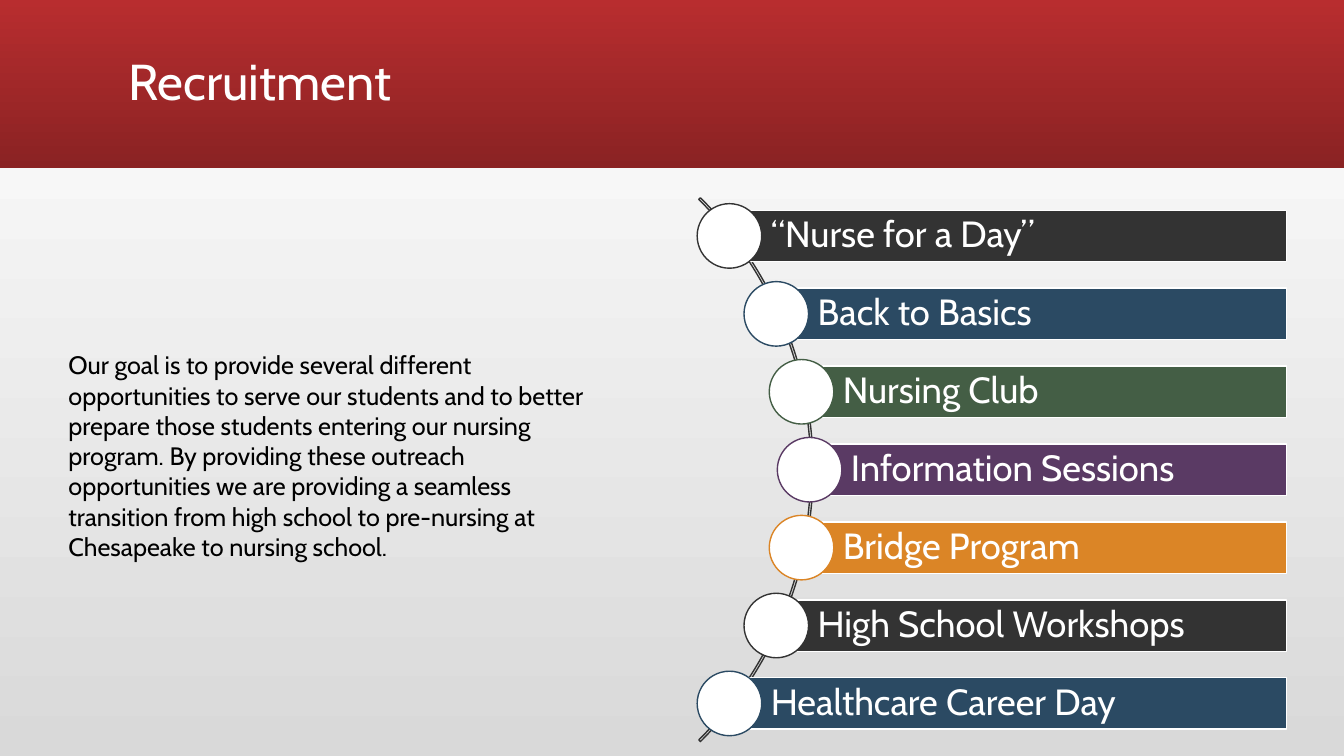
from math import sqrt

from pptx import Presentation
from pptx.dml.color import RGBColor
from pptx.enum.shapes import MSO_SHAPE as Shape
from pptx.enum.text import MSO_ANCHOR as Anchor, MSO_AUTO_SIZE as AutoSize, PP_ALIGN as Align
from pptx.util import Inches, Pt

WHITE = RGBColor(0xFF, 0xFF, 0xFF)
BLACK = RGBColor(0x00, 0x00, 0x00)
LIGHT_GRAY = RGBColor(0xD9, 0xD9, 0xD9)
RED = RGBColor(0xB8, 0x2D, 0x2F)
DARK_RED = RGBColor(0x8A, 0x22, 0x23)
CHARCOAL = RGBColor(0x33, 0x33, 0x33)
BLUE = RGBColor(0x2B, 0x4A, 0x63)
GREEN = RGBColor(0x44, 0x5E, 0x45)
PURPLE = RGBColor(0x5A, 0x3A, 0x64)
ORANGE = RGBColor(0xDB, 0x85, 0x26)

FONT = "Cabin"
HEADING = "Recruitment"
GOAL = (
    "Our goal is to provide several different opportunities to serve our students "
    "and to better prepare those students entering our nursing program. By providing "
    "these outreach opportunities we are providing a seamless transition from high "
    "school to pre-nursing at Chesapeake to nursing school."
)
PROGRAMS = [
    ("“Nurse for a Day”", CHARCOAL),
    ("Back to Basics", BLUE),
    ("Nursing Club", GREEN),
    ("Information Sessions", PURPLE),
    ("Bridge Program", ORANGE),
    ("High School Workshops", CHARCOAL),
    ("Healthcare Career Day", BLUE),
]

ARC_X, ARC_Y = 4.25, 4.66
ARC_SIZE = 7.63
NODE_RADIUS = 3.78
NODE_SIZE = 0.64
BAR_RIGHT = 12.76
BAR_HEIGHT = 0.51
ROW_STEP = 0.773


def box(left, top, width, height):
    return Inches(left), Inches(top), Inches(width), Inches(height)


def set_gradient(fill, start, end, angle):
    fill.gradient()
    fill.gradient_angle = angle
    for stop, color, position in zip(fill.gradient_stops, (start, end), (0, 1)):
        stop.color.rgb = color
        stop.position = position


def write(frame, text, size, color, anchor, spacing=1.0):
    frame.word_wrap = True
    frame.vertical_anchor = anchor
    paragraph = frame.paragraphs[0]
    paragraph.alignment = Align.LEFT
    paragraph.line_spacing = spacing
    run = paragraph.add_run()
    run.text = text
    run.font.name = FONT
    run.font.size = Pt(size)
    run.font.color.rgb = color


def add_shape(slide, kind, place, fill=None, line=None):
    shape = slide.shapes.add_shape(kind, *box(*place))
    shape.shadow.inherit = False
    if fill is None:
        shape.fill.background()
    else:
        shape.fill.solid()
        shape.fill.fore_color.rgb = fill
    if line is None:
        shape.line.fill.background()
    else:
        shape.line.color.rgb = line
        shape.line.width = Pt(1)
    return shape


def add_heading(slide):
    title = slide.shapes.title
    title.left, title.top, title.width, title.height = box(1.17, 0.11, 11, 1.45)
    write(title.text_frame, HEADING, 36, WHITE, Anchor.MIDDLE, 0.9)
    title.text_frame.auto_size = AutoSize.NONE
    band = add_shape(slide, Shape.RECTANGLE, (0, 0, 13.33, 1.67))
    set_gradient(band.fill, RED, DARK_RED, 270)
    title.element.addprevious(band.element)


def add_program(slide, row, name, color):
    offset = (row - (len(PROGRAMS) - 1) / 2) * ROW_STEP
    x = ARC_X + sqrt(NODE_RADIUS ** 2 - offset ** 2)
    y = ARC_Y + offset
    bar_place = (x, y - BAR_HEIGHT / 2, BAR_RIGHT - x, BAR_HEIGHT)
    bar = add_shape(slide, Shape.RECTANGLE, bar_place, color, WHITE)
    frame = bar.text_frame
    frame.margin_left = Inches(0.41)
    frame.margin_top = frame.margin_right = frame.margin_bottom = Inches(0.07)
    write(frame, name, 26, WHITE, Anchor.MIDDLE, 0.9)
    node_place = (x - NODE_SIZE / 2, y - NODE_SIZE / 2, NODE_SIZE, NODE_SIZE)
    add_shape(slide, Shape.OVAL, node_place, WHITE, color)


def main():
    deck = Presentation()
    deck.slide_width, deck.slide_height = Inches(13.33), Inches(7.5)
    slide = deck.slides.add_slide(deck.slide_layouts[5])
    set_gradient(slide.background.fill, LIGHT_GRAY, WHITE, 90)
    add_heading(slide)

    arc_place = (ARC_X - ARC_SIZE / 2, ARC_Y - ARC_SIZE / 2, ARC_SIZE, ARC_SIZE)
    arc = add_shape(slide, Shape.BLOCK_ARC, arc_place, line=CHARCOAL)
    for index, value in enumerate((189, 27, 0.003)):
        arc.adjustments[index] = value
    for row, (name, color) in enumerate(PROGRAMS):
        add_program(slide, row, name, color)

    goal = slide.shapes.add_textbox(*box(0.58, 3.42, 5.42, 2.22))
    write(goal.text_frame, GOAL, 18, BLACK, Anchor.TOP)
    goal.text_frame.auto_size = AutoSize.SHAPE_TO_FIT_TEXT
    deck.save("out.pptx")


if __name__ == "__main__":
    main()
